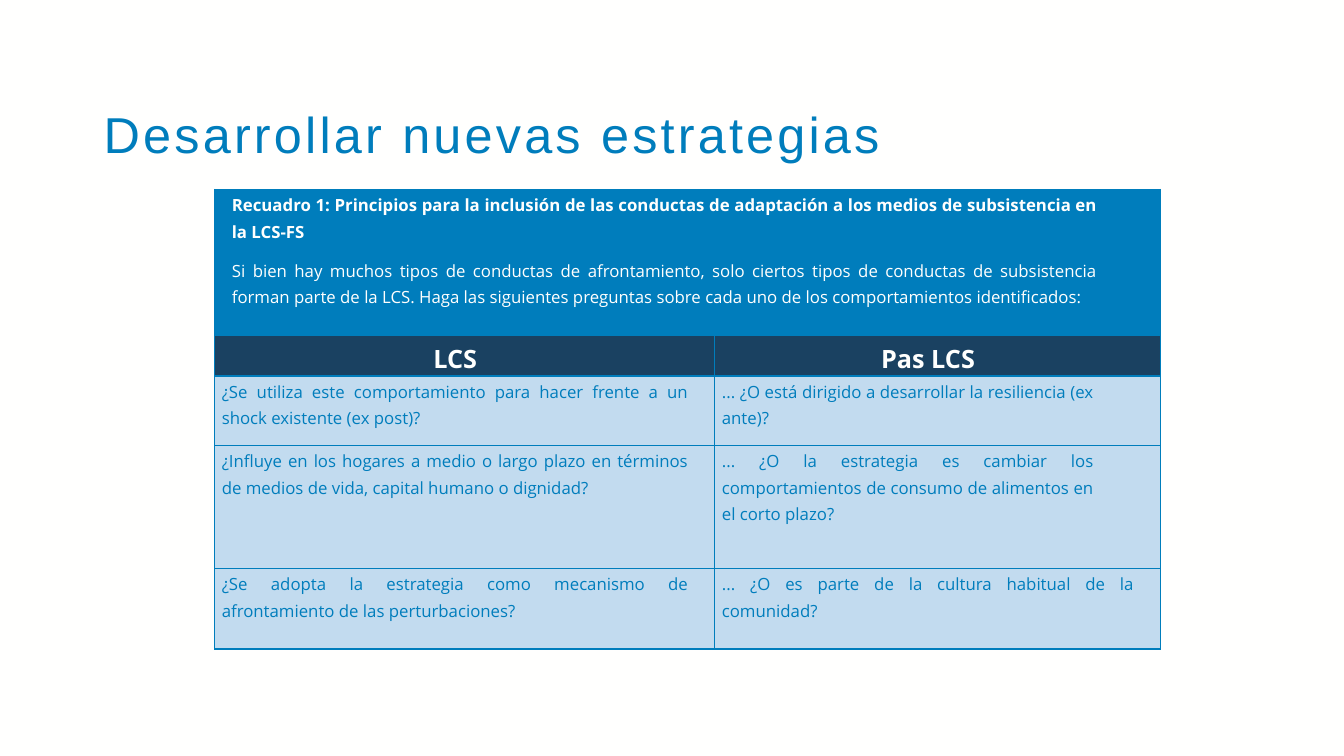
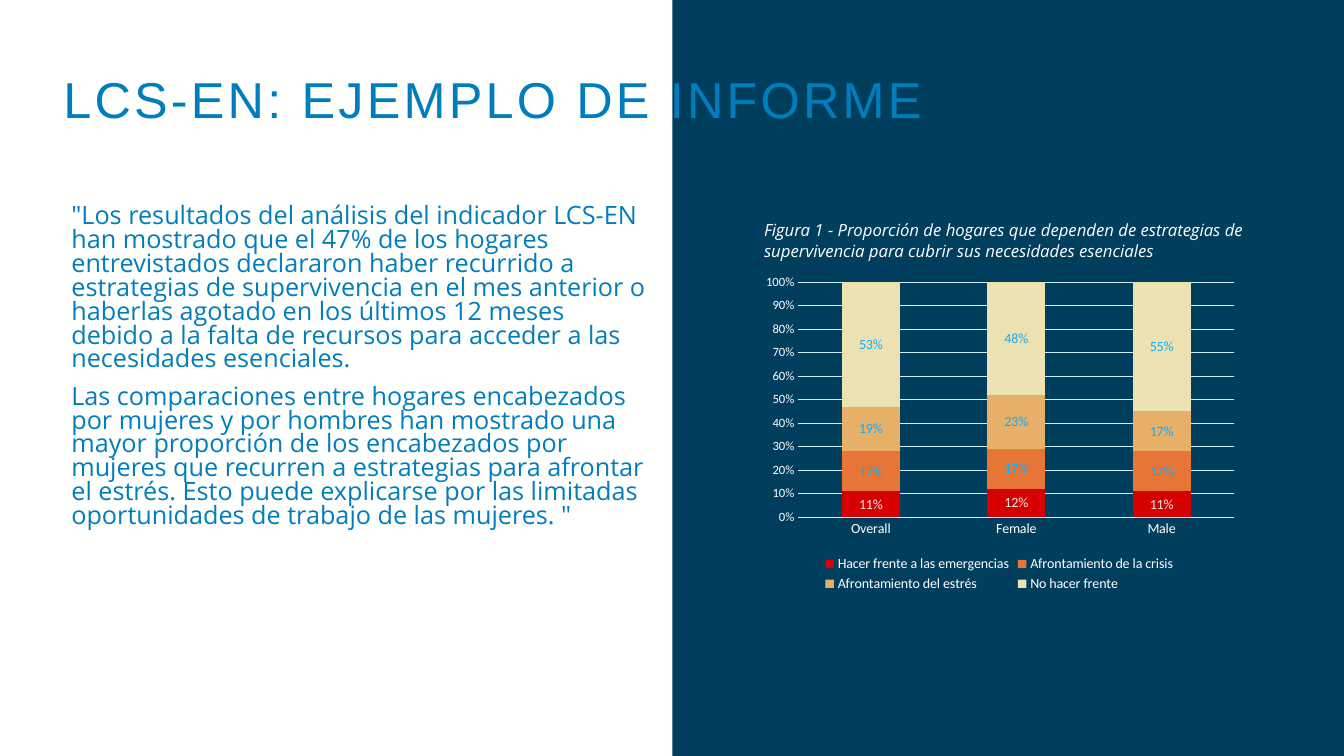
from pptx import Presentation
from pptx.chart.data import CategoryChartData
from pptx.dml.color import RGBColor
from pptx.enum.chart import XL_CHART_TYPE, XL_LEGEND_POSITION, XL_TICK_MARK
from pptx.enum.shapes import MSO_SHAPE
from pptx.enum.text import MSO_ANCHOR, PP_ALIGN
from pptx.oxml import parse_xml
from pptx.oxml.ns import nsdecls
from pptx.util import Inches, Pt

BLUE = "007DBC"
NAVY = "003E5E"
HEADER = "1A4161"
PALE = "C2DBEF"
WHITE = "FFFFFE"
GRID = "CFEFFF"
LABEL = "0EAEFF"
LABEL_LIGHT = "F1ECE8"
BODY_FONT = "Open Sans"
TITLE_FONT = "Arial"
CHART_FONT = "Calibri"

INTRO = [
    ("Recuadro 1: Principios para la inclusión de las conductas de adaptación a los "
     "medios de subsistencia en la LCS-FS", True),
    ("Si bien hay muchos tipos de conductas de afrontamiento, solo ciertos tipos de "
     "conductas de subsistencia forman parte de la LCS. Haga las siguientes preguntas "
     "sobre cada uno de los comportamientos identificados:", False),
]
HEADINGS = ["LCS", "Pas LCS"]
QUESTIONS = [
    ("¿Se utiliza este comportamiento para hacer frente a un shock existente (ex post)?",
     "... ¿O está dirigido a desarrollar la resiliencia (ex ante)?", 0.66),
    ("¿Influye en los hogares a medio o largo plazo en términos de medios de vida, "
     "capital humano o dignidad?",
     "... ¿O la estrategia es cambiar los comportamientos de consumo de alimentos "
     "en el corto plazo?", 0.66),
    ("¿Se adopta la estrategia como mecanismo de afrontamiento de las perturbaciones?",
     "... ¿O es parte de la cultura habitual de la comunidad?", 0.26),
]
FINDINGS = [
    "\"Los resultados del análisis del indicador LCS-EN han mostrado que el 47% de los "
    "hogares entrevistados declararon haber recurrido a estrategias de supervivencia en "
    "el mes anterior o haberlas agotado en los últimos 12 meses debido a la falta de "
    "recursos para acceder a las necesidades esenciales.",
    "Las comparaciones entre hogares encabezados por mujeres y por hombres han mostrado "
    "una mayor proporción de los encabezados por mujeres que recurren a estrategias para "
    "afrontar el estrés. Esto puede explicarse por las limitadas oportunidades de trabajo "
    "de las mujeres. \"",
]
CAPTION = ("Figura 1 - Proporción de hogares que dependen de estrategias de supervivencia "
           "para cubrir sus necesidades esenciales")
GROUPS = ["Overall", "Female", "Male"]
STRATEGIES = [
    ("Hacer frente a las emergencias", (0.11, 0.12, 0.11), "D70000", LABEL_LIGHT),
    ("Afrontamiento de la crisis", (0.17, 0.17, 0.17), "E67536", LABEL),
    ("Afrontamiento del estrés", (0.19, 0.23, 0.17), "E6B068", LABEL),
    ("No hacer frente", (0.53, 0.48, 0.55), "ECE1B1", LABEL),
]


def rgb(value):
    return RGBColor.from_string(value)


def style_font(font, size, color, name=BODY_FONT, bold=False, italic=False):
    font.size = Pt(size)
    font.name = name
    font.bold = bold
    font.italic = italic
    font.color.rgb = rgb(color)


def add_paragraph(frame, text, size, color, align=PP_ALIGN.LEFT, spacing=1.0,
                  before=0, after=0, **font_options):
    first = not frame.paragraphs[0].runs
    paragraph = frame.paragraphs[0] if first else frame.add_paragraph()
    paragraph.alignment = align
    paragraph.line_spacing = spacing
    paragraph.space_before = Pt(0 if first else before)
    paragraph.space_after = Pt(after)
    run = paragraph.add_run()
    run.text = text
    style_font(run.font, size, color, **font_options)
    return run


def add_slide(prs):
    slide = prs.slides.add_slide(prs.slide_layouts[6])
    slide.background.fill.solid()
    slide.background.fill.fore_color.rgb = rgb(WHITE)
    return slide


def add_text_box(slide, left, top, width, height, anchor=MSO_ANCHOR.TOP):
    box = slide.shapes.add_textbox(Inches(left), Inches(top), Inches(width), Inches(height))
    frame = box.text_frame
    frame.word_wrap = True
    frame.vertical_anchor = anchor
    return frame


def add_title(slide, text, left, top, width, height, anchor=MSO_ANCHOR.TOP):
    frame = add_text_box(slide, left, top, width, height, anchor)
    run = add_paragraph(frame, text, 36, BLUE, spacing=0.9, name=TITLE_FONT)
    run.font._element.set("spc", "230")


def add_panel(slide, left, top, width, height):
    panel = slide.shapes.add_shape(MSO_SHAPE.RECTANGLE, Inches(left), Inches(top),
                                   Inches(width), Inches(height))
    panel.shadow.inherit = False
    panel.fill.solid()
    panel.fill.fore_color.rgb = rgb(NAVY)
    panel.line.fill.background()
    return panel


def style_cell(cell, fill, left=0.07, right=0.26):
    properties = cell._tc.get_or_add_tcPr()
    for side in ("lnL", "lnR", "lnT", "lnB"):
        properties.append(parse_xml(
            f'<a:{side} {nsdecls("a")} w="12700"><a:solidFill>'
            f'<a:srgbClr val="{BLUE}"/></a:solidFill></a:{side}>'))
    cell.fill.solid()
    cell.fill.fore_color.rgb = rgb(fill)
    cell.margin_left = Inches(left)
    cell.margin_right = Inches(right)
    cell.margin_top = Inches(0.01)
    cell.margin_bottom = 0


def add_principles_table(slide):
    widths = [4.96, 4.42]
    heights = [1.45, 0.4, 0.69, 1.22, 0.8]
    frame = slide.shapes.add_table(len(heights), len(widths), Inches(2.13), Inches(1.88),
                                   Inches(sum(widths)), Inches(sum(heights)))
    table = frame.table
    table.first_row = False
    table.horz_banding = False
    for column, width in zip(table.columns, widths):
        column.width = Inches(width)
    for row, height in zip(table.rows, heights):
        row.height = Inches(height)

    intro = table.cell(0, 0)
    intro.merge(table.cell(0, 1))
    for column in range(2):
        style_cell(table.cell(0, column), BLUE, 0.17, 0.62)
    for text, bold in INTRO:
        add_paragraph(intro.text_frame, text, 12, WHITE, PP_ALIGN.JUSTIFY, 1.15,
                      before=3.5, after=6, bold=bold)

    for column, heading in enumerate(HEADINGS):
        cell = table.cell(1, column)
        style_cell(cell, HEADER)
        add_paragraph(cell.text_frame, heading, 18, WHITE, PP_ALIGN.CENTER, 1.15, bold=True)

    for row, (included, excluded, right) in enumerate(QUESTIONS, start=2):
        for column, (text, margin) in enumerate([(included, 0.26), (excluded, right)]):
            cell = table.cell(row, column)
            style_cell(cell, PALE, right=margin)
            add_paragraph(cell.text_frame, text, 12, BLUE, PP_ALIGN.JUSTIFY, 1.15, after=6)


def set_plot_layout(chart, **fractions):
    values = "".join(f'<c:{key} val="{value}"/>' for key, value in fractions.items())
    plot_area = chart._chartSpace.chart.plotArea
    for layout in plot_area.findall("{*}layout"):
        plot_area.remove(layout)
    plot_area.insert(0, parse_xml(
        f'<c:layout {nsdecls("c")}><c:manualLayout><c:layoutTarget val="inner"/>'
        f'<c:xMode val="edge"/><c:yMode val="edge"/>{values}</c:manualLayout></c:layout>'))


def style_axes(chart):
    categories = chart.category_axis
    values = chart.value_axis
    for axis, size in ((categories, 10), (values, 9)):
        axis.major_tick_mark = XL_TICK_MARK.NONE
        axis.minor_tick_mark = XL_TICK_MARK.NONE
        style_font(axis.tick_labels.font, size, WHITE, CHART_FONT)
    values.minimum_scale = 0
    values.maximum_scale = 1
    values.major_unit = 0.1
    values.tick_labels.number_format = "###0%"
    values.tick_labels.number_format_is_linked = False
    values.format.line.fill.background()
    for line in (categories.format.line, values.major_gridlines.format.line):
        line.color.rgb = rgb(GRID)
        line.width = Pt(0.75)


def add_strategy_chart(slide):
    data = CategoryChartData(number_format="###0%")
    data.categories = GROUPS
    for name, shares, _, _ in STRATEGIES:
        data.add_series(name, shares)
    chart = slide.shapes.add_chart(XL_CHART_TYPE.COLUMN_STACKED, Inches(7.48), Inches(2.67),
                                   Inches(4.86), Inches(3.24), data).chart
    chart.has_title = False
    style_font(chart.font, 10, BLUE, CHART_FONT)
    chart.has_legend = True
    chart.legend.position = XL_LEGEND_POSITION.BOTTOM
    chart.legend.include_in_layout = False
    style_font(chart.legend.font, 10, WHITE, CHART_FONT)
    style_axes(chart)
    set_plot_layout(chart, x=0.09, y=0.04, w=0.89, h=0.72)
    plot = chart.plots[0]
    plot.gap_width = 150
    plot.overlap = 100
    plot.vary_by_categories = False
    for series, (_, _, fill, label_color) in zip(plot.series, STRATEGIES):
        series.format.fill.solid()
        series.format.fill.fore_color.rgb = rgb(fill)
        labels = series.data_labels
        labels.show_value = True
        labels.number_format = "###0%"
        labels.number_format_is_linked = False
        style_font(labels.font, 10, label_color, CHART_FONT)


def build_principles_slide(prs):
    slide = add_slide(prs)
    add_title(slide, "Desarrollar nuevas estrategias", 0.93, 0.73, 11.53, 1.26,
              MSO_ANCHOR.MIDDLE)
    add_principles_table(slide)


def build_report_slide(prs):
    slide = add_slide(prs)
    add_panel(slide, 6.67, 0, 6.67, 7.5)
    add_title(slide, "LCS-EN: EJEMPLO DE INFORME", 0.53, 0.69, 12.09, 0.72)
    caption = add_panel(slide, 7.48, 2.1, 4.97, 0.57).text_frame
    caption.word_wrap = True
    caption.vertical_anchor = MSO_ANCHOR.MIDDLE
    add_paragraph(caption, CAPTION, 12, WHITE, italic=True)
    add_strategy_chart(slide)
    findings = add_text_box(slide, 0.61, 1.99, 5.9, 4.27)
    for text in FINDINGS:
        add_paragraph(findings, text, 18, BLUE, spacing=0.79, before=9.5)


def main():
    prs = Presentation()
    prs.slide_width = Inches(13.33)
    prs.slide_height = Inches(7.5)
    build_principles_slide(prs)
    build_report_slide(prs)
    prs.save("out.pptx")


if __name__ == "__main__":
    main()
